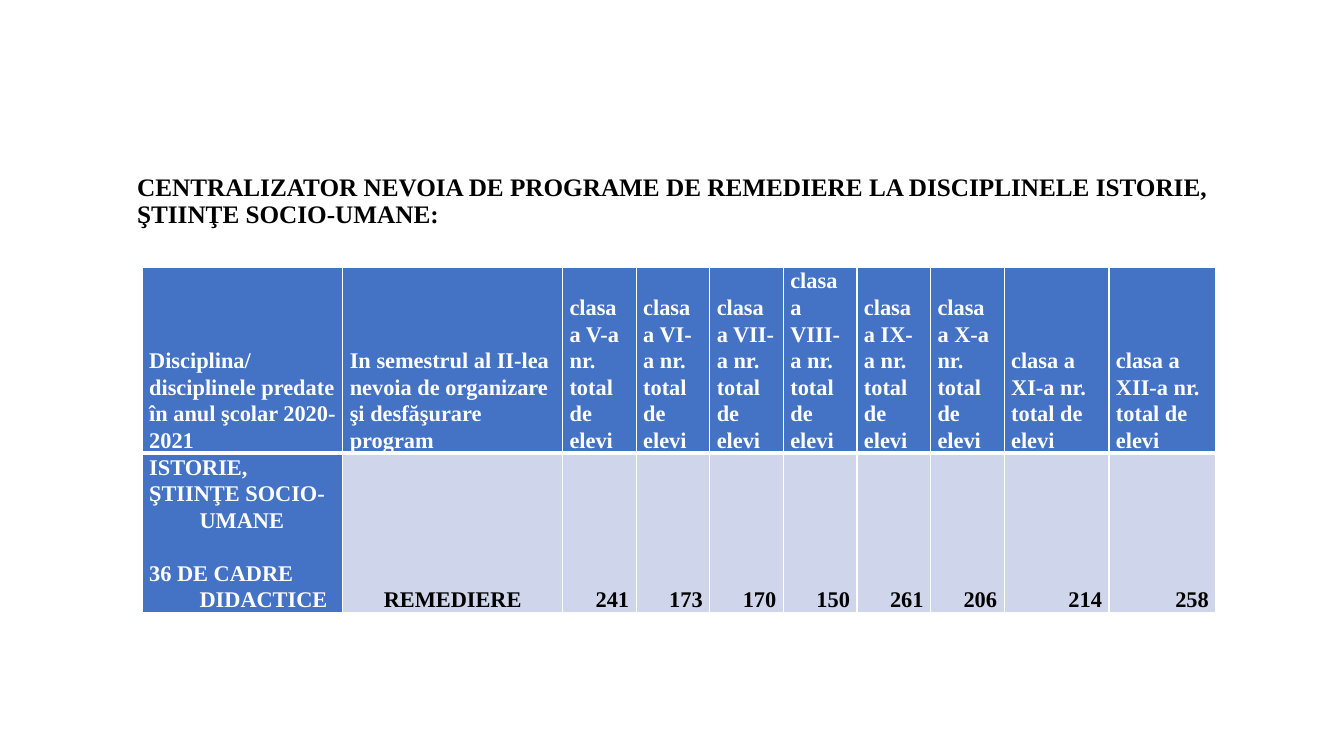
from dataclasses import dataclass

from lxml import etree
from pptx import Presentation
from pptx.dml.color import RGBColor
from pptx.enum.text import MSO_ANCHOR, MSO_AUTO_SIZE, PP_ALIGN
from pptx.oxml.ns import qn
from pptx.util import Inches, Pt

MIDDLE, BOTTOM = MSO_ANCHOR.MIDDLE, MSO_ANCHOR.BOTTOM
LEFT, CENTER, RIGHT = PP_ALIGN.LEFT, PP_ALIGN.CENTER, PP_ALIGN.RIGHT
NO_AUTOFIT = MSO_AUTO_SIZE.NONE
TITLE_ONLY = 5


@dataclass(frozen=True)
class Theme:
    font: str = "Times New Roman"
    title_size: int = 18
    table_size: int = 16
    black: str = "000000"
    white: str = "FFFFFF"
    header: str = "4472C4"
    body: str = "CFD5EA"


THEME = Theme()

TITLE = ("CENTRALIZATOR NEVOIA DE PROGRAME DE REMEDIERE LA DISCIPLINELE ISTORIE, "
         "ŞTIINŢE SOCIO-UMANE:")
STUDENTS_BY_GRADE = {"V": 241, "VI": 173, "VII": 170, "VIII": 150,
                     "IX": 261, "X": 206, "XI": 214, "XII": 258}
HEADERS = ["Disciplina/disciplinele predate în anul şcolar 2020-2021",
           "In semestrul al II-lea nevoia de organizare şi desfăşurare program"]
HEADERS += [f"clasa a {grade}-a nr. total de elevi" for grade in STUDENTS_BY_GRADE]
SUBJECT = "ISTORIE,\nŞTIINŢE SOCIO-UMANE\n36 DE CADRE DIDACTICE"
COLUMN_WIDTHS = [1.99, 2.18] + [0.73] * 6 + [1.04, 1.06]
ROW_HEIGHTS = [1.8, 1.55]


def format_paragraph(paragraph, size, color, spacing, alignment=LEFT):
    paragraph.alignment = alignment
    paragraph.line_spacing = spacing
    for run in paragraph.runs:
        run.font.name = THEME.font
        run.font.size = Pt(size)
        run.font.bold = True
        run.font.color.rgb = RGBColor.from_string(color)


def set_borders(cell, widths):
    properties = cell._tc.get_or_add_tcPr()
    for side, width in zip("LRTB", widths):
        line = etree.SubElement(properties, qn(f"a:ln{side}"), w=str(Pt(width)))
        fill = etree.SubElement(line, qn("a:solidFill"))
        etree.SubElement(fill, qn("a:srgbClr"), val=THEME.white)


def fill_cell(cell, text, background, color, alignment, border_widths):
    cell.text_frame.text = text
    cell.vertical_anchor = BOTTOM
    cell.margin_left = cell.margin_right = Inches(0.07)
    cell.margin_top = cell.margin_bottom = 0
    set_borders(cell, border_widths)
    cell.fill.solid()
    cell.fill.fore_color.rgb = RGBColor.from_string(background)
    for paragraph in cell.text_frame.paragraphs:
        format_paragraph(paragraph, THEME.table_size, color, 1.07, alignment)


def place_title(slide, left, top, width, height):
    title = slide.shapes.title
    title.left, title.top = Inches(left), Inches(top)
    title.width, title.height = Inches(width), Inches(height)
    frame = title.text_frame
    frame.text = TITLE
    frame.word_wrap = True
    frame.auto_size = NO_AUTOFIT
    frame.vertical_anchor = MIDDLE
    frame.margin_left = frame.margin_right = Inches(0.1)
    frame.margin_top, frame.margin_bottom = Inches(0.05), Inches(0.8)
    format_paragraph(frame.paragraphs[0], THEME.title_size, THEME.black, 0.9)


def place_table(slide, left, top, width, height):
    frame = slide.shapes.add_table(len(ROW_HEIGHTS), len(HEADERS), Inches(left),
                                   Inches(top), Inches(width), Inches(height))
    table = frame.table
    table.horz_banding = False
    table.first_col = True
    for column, column_width in zip(table.columns, COLUMN_WIDTHS):
        column.width = Inches(column_width)
    for row, row_height in zip(table.rows, ROW_HEIGHTS):
        row.height = Inches(row_height)

    for index, header in enumerate(HEADERS):
        fill_cell(table.cell(0, index), header, THEME.header, THEME.white, LEFT, (1, 1, 1, 3))

    body_borders = (1, 1, 3, 1)
    subject_cell = table.cell(1, 0)
    fill_cell(subject_cell, SUBJECT, THEME.header, THEME.white, LEFT, body_borders)
    for paragraph in subject_cell.text_frame.paragraphs:
        properties = paragraph._p.get_or_add_pPr()
        properties.set("marL", str(Inches(0.5)))
        properties.set("indent", str(Inches(-0.5)))
    subject_cell.text_frame.paragraphs[-1].space_before = Pt(19)

    fill_cell(table.cell(1, 1), "REMEDIERE", THEME.body, THEME.black, CENTER, body_borders)
    for index, students in enumerate(STUDENTS_BY_GRADE.values(), start=2):
        fill_cell(table.cell(1, index), str(students), THEME.body, THEME.black,
                  RIGHT, body_borders)


def main():
    presentation = Presentation()
    presentation.slide_width, presentation.slide_height = Inches(13.33), Inches(7.5)
    slide = presentation.slides.add_slide(presentation.slide_layouts[TITLE_ONLY])
    place_title(slide, 1.26, 1.65, 11.5, 1.45)
    place_table(slide, 1.41, 2.65, sum(COLUMN_WIDTHS), sum(ROW_HEIGHTS))
    presentation.save("out.pptx")


if __name__ == "__main__":
    main()
